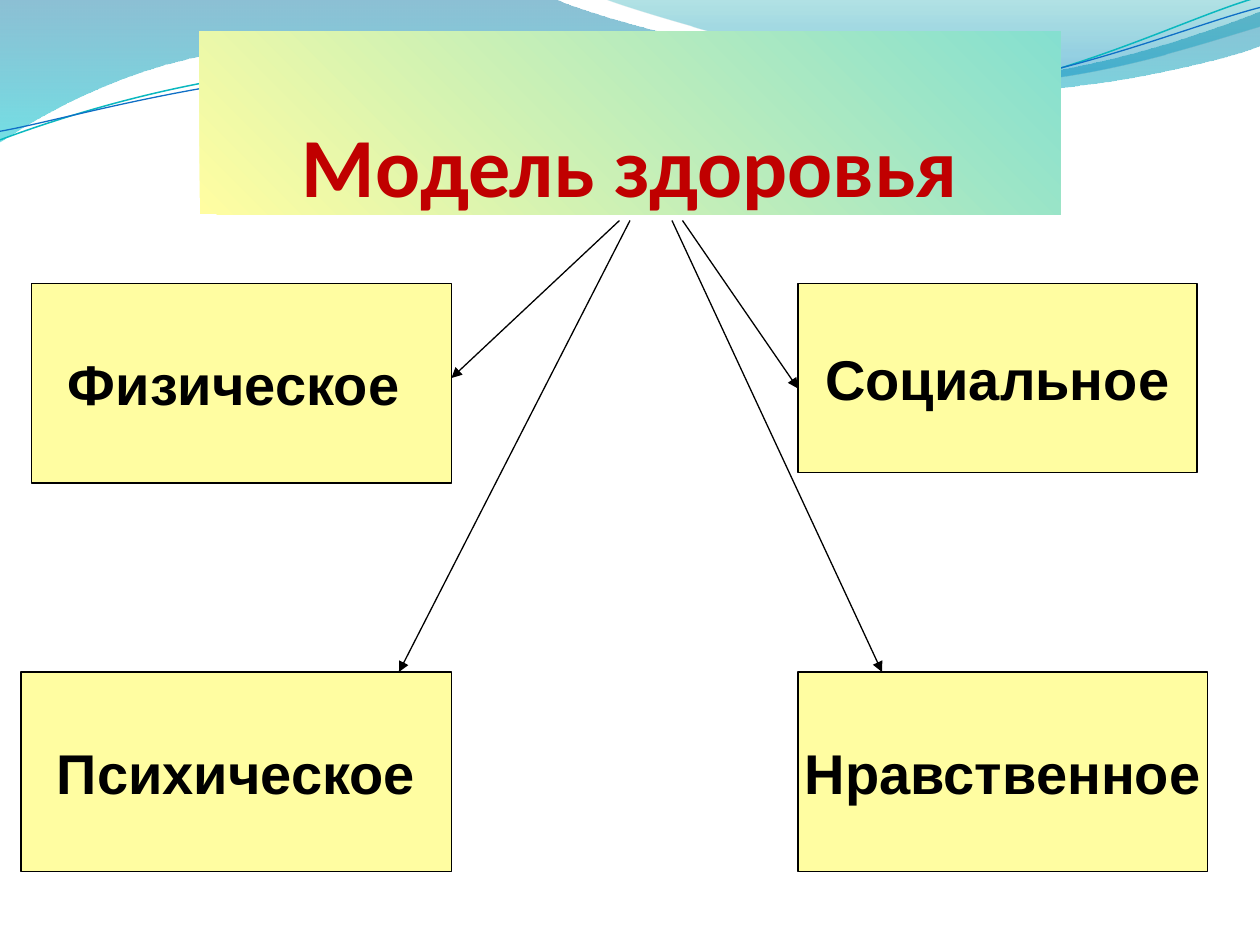
from lxml import etree
from pptx import Presentation
from pptx.dml import color
from pptx.enum import shapes, text
from pptx.oxml import ns
from pptx.util import Pt


def rgb(value):
    return color.RGBColor.from_string(value)


def write(shape, words, *, font, size, ink, anchor, wrap, margins):
    """Put one bold centred paragraph into the shape."""
    frame = shape.text_frame
    frame.auto_size = text.MSO_AUTO_SIZE.NONE
    frame.word_wrap = wrap
    frame.vertical_anchor = anchor
    (frame.margin_left, frame.margin_top,
     frame.margin_right, frame.margin_bottom) = [Pt(m) for m in margins]
    frame.text = words
    paragraph = frame.paragraphs[0]
    paragraph.alignment = text.PP_ALIGN.CENTER
    paragraph.font.name = font
    paragraph.font.size = Pt(size)
    paragraph.font.bold = True
    paragraph.font.color.rgb = rgb(ink)


deck = Presentation()
deck.slide_width, deck.slide_height = Pt(720), Pt(540)
slide = deck.slides.add_slide(deck.slide_layouts[5])

# Waves: each step is one point (straight) or three points (cubic curve).
# Gradient stops are (position, colour, opacity in percent).
waves = [
    {"start": (0, -0.7), "gradient": [(0, "0074A1", 45), (1, "00C6CF", 55)],
     "steps": [[(316.8, -0.7)],
               [(342.7, 12.2), (478, 45.4), (545.8, 45.4)],
               [(614.2, 45.4), (689.8, 18.7), (720, 6.5)],
               [(720.7, 26)],
               [(707.8, 31.7), (626.4, 54.7), (537, 54)],
               [(447.8, 54), (275, 20.2), (185, 24.5)],
               [(92.9, 25.2), (33, 59.8), (-0.7, 81.4)]]},
    {"start": (344.9, -0.7), "gradient": [(0, "00A1A9", 30), (0.8, "008BBF", 45)],
     "steps": [[(366.5, 7.9), (491, 44.6), (553.7, 46.8)],
               [(616.3, 49.7), (691.9, 23), (720, 15)],
               [(720, 0)]]},
    {"start": (-1.4, 63), "line": ("0AB8BF", 0.85),
     "steps": [[(33.8, 51.7), (114.1, 29.4), (199.8, 29.9)],
               [(284.9, 30.3), (425.8, 67.3), (512.4, 64.9)],
               [(599, 62.4), (676.4, 25.7), (720.2, 15.5)]]},
    {"start": (-1.1, 58), "line": ("0F6FC6", 0.75),
     "steps": [[(32.9, 53.8), (118.3, 32.5), (204.1, 33)],
               [(290.6, 33.4), (428.9, 63.1), (515.5, 61.4)],
               [(601.3, 59.6), (678.4, 30.1), (721.4, 21.3)]]},
]
for wave in waves:
    builder = slide.shapes.build_freeform(*[Pt(v) for v in wave["start"]])
    builder.add_line_segments([(Pt(x), Pt(y)) for step in wave["steps"] for x, y in step],
                              close="gradient" in wave)
    ribbon = builder.convert_to_shape()
    ribbon.shadow.inherit = False

    # Join each group of three straight segments into one curve
    segments = iter(list(ribbon._element.spPr.iter(ns.qn("a:lnTo"))))
    for step in wave["steps"]:
        group = [next(segments) for _ in step]
        if len(group) == 3:
            curve = etree.Element(ns.qn("a:cubicBezTo"))
            group[0].addprevious(curve)
            for segment in group:
                curve.append(segment[0])
                segment.getparent().remove(segment)

    if "gradient" in wave:
        ribbon.line.fill.background()
        ribbon.fill.gradient()
        ribbon.fill.gradient_angle = 270
        for stop, (position, tint, _) in zip(ribbon.fill.gradient_stops, wave["gradient"]):
            stop.position = position
            stop.color.rgb = rgb(tint)
        tints = ribbon._element.spPr.iter(ns.qn("a:srgbClr"))
        for node, (_, _, opacity) in zip(tints, wave["gradient"]):
            etree.SubElement(node, ns.qn("a:alpha"), val=str(opacity * 1000))
    else:
        tint, width = wave["line"]
        ribbon.rotation = -2.7
        ribbon.fill.background()
        ribbon.line.color.rgb = rgb(tint)
        ribbon.line.width = Pt(width)

# Title, brought in front of the waves
title = slide.shapes.title
slide.shapes._spTree.append(title._element)
title.left, title.top, title.width, title.height = Pt(114), Pt(18), Pt(492), Pt(104.5)
title.fill.gradient()
title.fill.gradient_angle = 45
for stop, position, tint in zip(title.fill.gradient_stops, (0, 1), ("FFFDA1", "85DFD0")):
    stop.position = position
    stop.color.rgb = rgb(tint)
write(title, "Модель здоровья", font="Calibri", size=48, ink="C00000",
      anchor=text.MSO_ANCHOR.BOTTOM, wrap=True, margins=(0, 3.6, 0, 0))

# Four kinds of health
kinds = [
    ("Физическое ", 18, 162, 240, 114),
    ("Психическое", 12, 384, 246, 114),
    ("Нравственное", 456, 384, 234, 114),
    ("Социальное", 456, 162, 228, 108),
]
for words, *place in kinds:
    kind = slide.shapes.add_shape(shapes.MSO_SHAPE.RECTANGLE, *[Pt(v) for v in place])
    kind.shadow.inherit = False
    kind.fill.solid()
    kind.fill.fore_color.rgb = rgb("FFFDA1")
    kind.line.color.rgb = rgb("000000")
    kind.line.width = Pt(0.75)
    write(kind, words, font="Arial", size=32, ink="000000",
          anchor=text.MSO_ANCHOR.MIDDLE, wrap=False, margins=(7.2, 3.6, 7.2, 3.6))

# Arrows from the title to each kind
ARROW_TOP = 126
for start_x, end_x, end_y in [(354, 258, 216), (390, 456, 222), (384, 504, 384), (360, 228, 384)]:
    arrow = slide.shapes.add_connector(shapes.MSO_CONNECTOR.STRAIGHT, Pt(start_x), Pt(ARROW_TOP),
                                       Pt(end_x), Pt(end_y))
    arrow.line.color.rgb = rgb("000000")
    arrow.line.width = Pt(0.75)
    etree.SubElement(arrow.line._get_or_add_ln(), ns.qn("a:tailEnd"), type="triangle")
    etree.SubElement(arrow._element.spPr, ns.qn("a:effectLst"))

deck.save("out.pptx")
